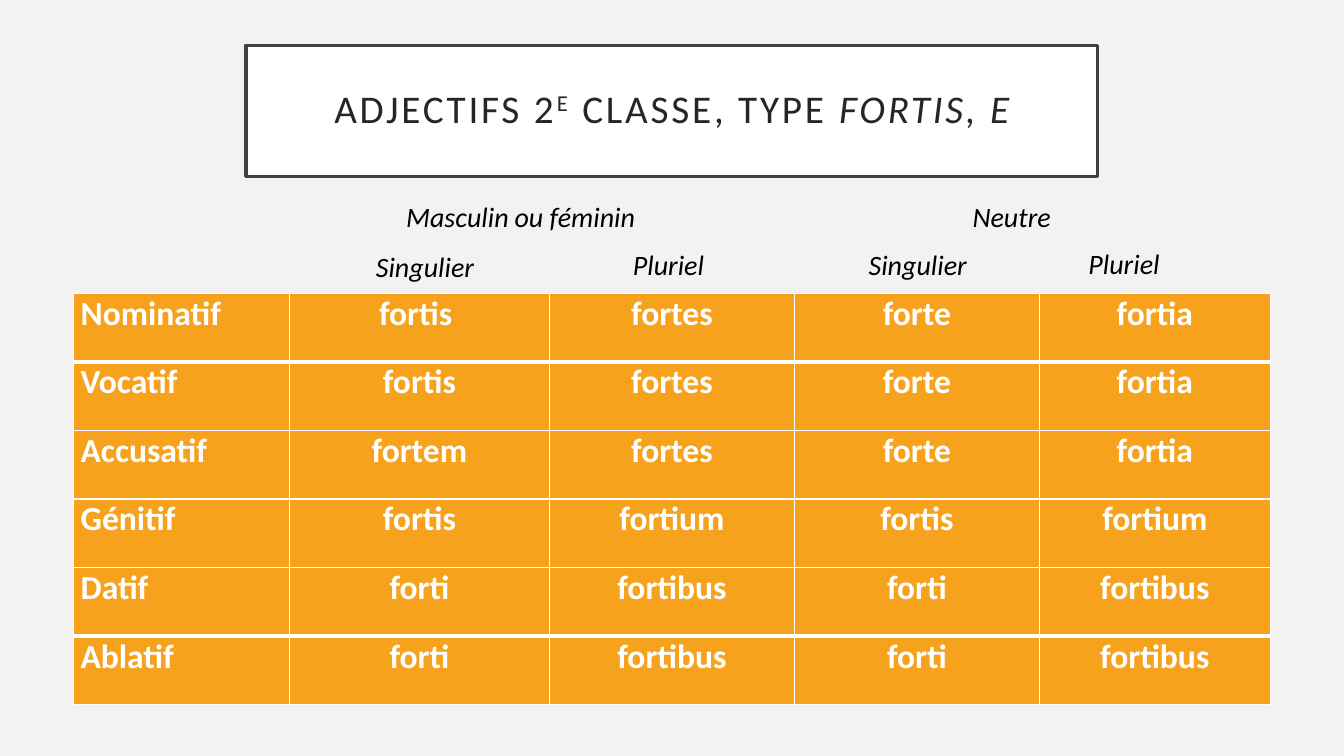
from lxml import etree
from pptx import Presentation
from pptx.dml.color import RGBColor
from pptx.enum.shapes import MSO_SHAPE
from pptx.enum.text import MSO_ANCHOR, MSO_AUTO_SIZE, PP_ALIGN
from pptx.oxml.ns import qn
from pptx.util import Pt

RECTANGLE = MSO_SHAPE.RECTANGLE
MIDDLE = MSO_ANCHOR.MIDDLE
GROW = MSO_AUTO_SIZE.SHAPE_TO_FIT_TEXT
CENTER = PP_ALIGN.CENTER
LEFT = PP_ALIGN.LEFT

FONT = "Calibri"
COLORS = {
    "background": "F2F2F2",
    "white": "FFFFFF",
    "black": "000000",
    "frame": "404040",
    "title": "262626",
    "orange": "F6A21D",
}


def color(name):
    return RGBColor.from_string(COLORS[name])


def style_font(font, size, name):
    font.name = FONT
    font.size = Pt(size)
    font.color.rgb = color(name)


deck = Presentation()
deck.slide_width = Pt(960)
deck.slide_height = Pt(540)
page = deck.slides.add_slide(deck.slide_layouts[6])
page.background.fill.solid()
page.background.fill.fore_color.rgb = color("background")

title = page.shapes.add_shape(RECTANGLE, Pt(175.7), Pt(32.4), Pt(608.4), Pt(93.6))
title.shadow.inherit = False
title.fill.solid()
title.fill.fore_color.rgb = color("white")
title.line.color.rgb = color("frame")
title.line.width = Pt(2.5)
frame = title.text_frame
frame.word_wrap = True
frame.vertical_anchor = MIDDLE
frame.margin_left = frame.margin_right = Pt(14.4)
frame.margin_top = frame.margin_bottom = Pt(14.4)
para = frame.paragraphs[0]
para.alignment = CENTER
para.line_spacing = 0.9
style_font(para.font, 28, "title")
for text, baseline, italic in [
    ("ADJECTIFS 2", 0, False),
    ("E", 30000, False),
    (" CLASSE, TYPE ", 0, False),
    ("FORTIS, E", 0, True),
]:
    span = para.add_run()
    span.text = text
    style_font(span.font, 28, "title")
    span.font.italic = italic
    properties = span.font._element
    properties.set("spc", "200")
    if baseline:
        properties.set("baseline", str(baseline))

declensions = [
    ("Nominatif", "fortis ", "fortes", "forte", "fortia"),
    ("Vocatif", "fortis", "fortes", "forte", "fortia"),
    ("Accusatif", "fortem", "fortes", "forte", "fortia"),
    ("Génitif", "fortis", "fortium", "fortis", "fortium"),
    ("Datif", "forti", "fortibus", "forti", "fortibus"),
    ("Ablatif", "forti", "fortibus", "forti", "fortibus"),
]
column_widths = [154.1, 185.8, 175, 175, 164.9]
row_height = 49
thick_rules = (1, 5)
table = page.shapes.add_table(
    len(declensions), len(column_widths), Pt(52.6), Pt(209.5),
    Pt(sum(column_widths)), Pt(row_height * len(declensions)),
).table
for column, width in zip(table.columns, column_widths):
    column.width = Pt(width)
for row, forms in enumerate(declensions):
    table.rows[row].height = Pt(row_height)
    for column, form in enumerate(forms):
        cell = table.cell(row, column)
        cell.margin_left = cell.margin_right = Pt(5)
        cell.margin_top = cell.margin_bottom = Pt(0)
        top = 3 if row in thick_rules else 1
        bottom = 3 if row + 1 in thick_rules else 1
        cell_properties = cell._tc.get_or_add_tcPr()
        for side, width in [("lnL", 1), ("lnR", 1), ("lnT", top), ("lnB", bottom)]:
            border = etree.SubElement(cell_properties, qn("a:" + side), w=str(Pt(width)))
            border_fill = etree.SubElement(border, qn("a:solidFill"))
            etree.SubElement(border_fill, qn("a:srgbClr"), val=COLORS["white"])
        cell.fill.solid()
        cell.fill.fore_color.rgb = color("orange")
        para = cell.text_frame.paragraphs[0]
        para.text = form
        para.alignment = CENTER if column else LEFT
        style_font(para.font, 24, "white")
        para.font.bold = True

for left, top, width, spans in [
    (283, 139, 206.6, [("Masculin", 20), (" ", 18), ("ou féminin", 20)]),
    (687.6, 139, 108.7, [("Neutre", 20)]),
    (613.4, 173.5, 108.7, [("Singulier", 20)]),
    (261.4, 175, 108.7, [("Singulier", 20)]),
    (445, 173.5, 108.7, [("Pluriel", 20)]),
    (770.4, 172.8, 108.7, [("Pluriel", 20)]),
]:
    box = page.shapes.add_textbox(Pt(left), Pt(top), Pt(width), Pt(31.5))
    box.text_frame.word_wrap = True
    box.text_frame.auto_size = GROW
    para = box.text_frame.paragraphs[0]
    style_font(para.font, 20, "black")
    para.font.italic = True
    for text, size in spans:
        span = para.add_run()
        span.text = text
        span.font.size = Pt(size)

deck.save("out.pptx")
